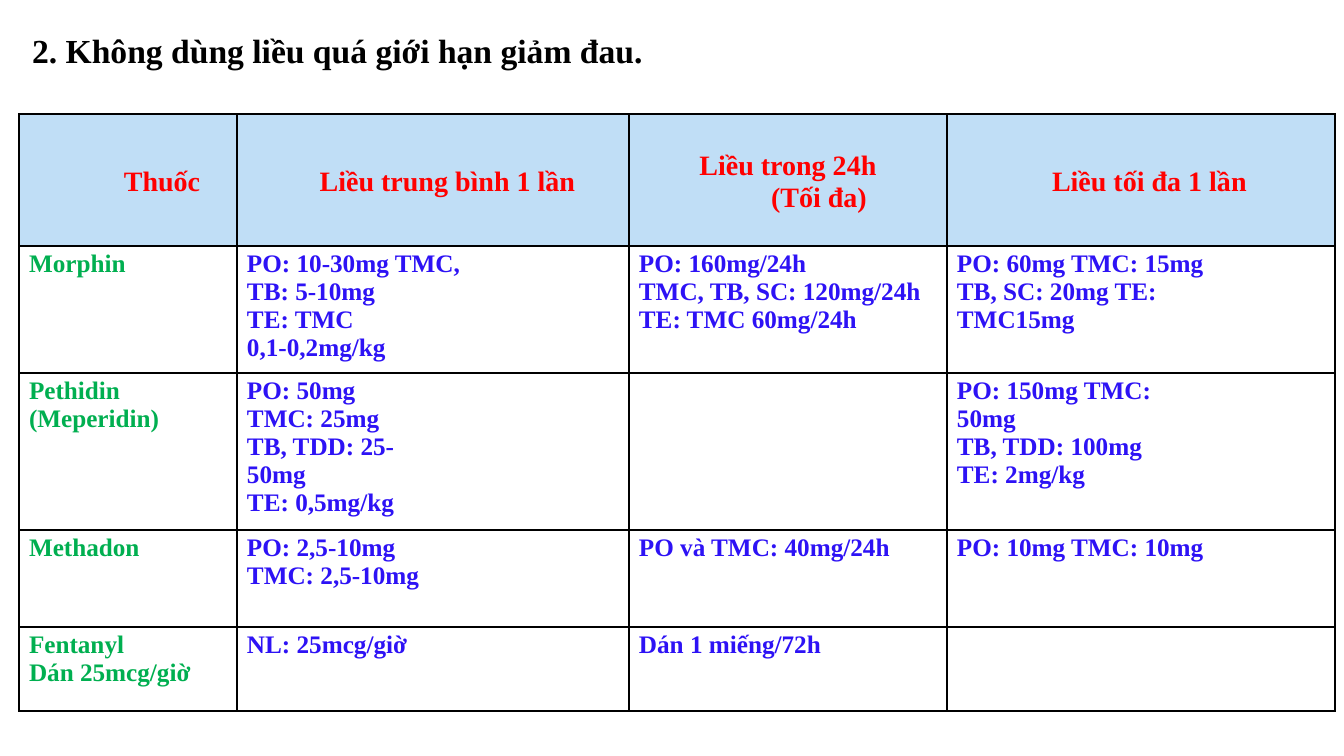
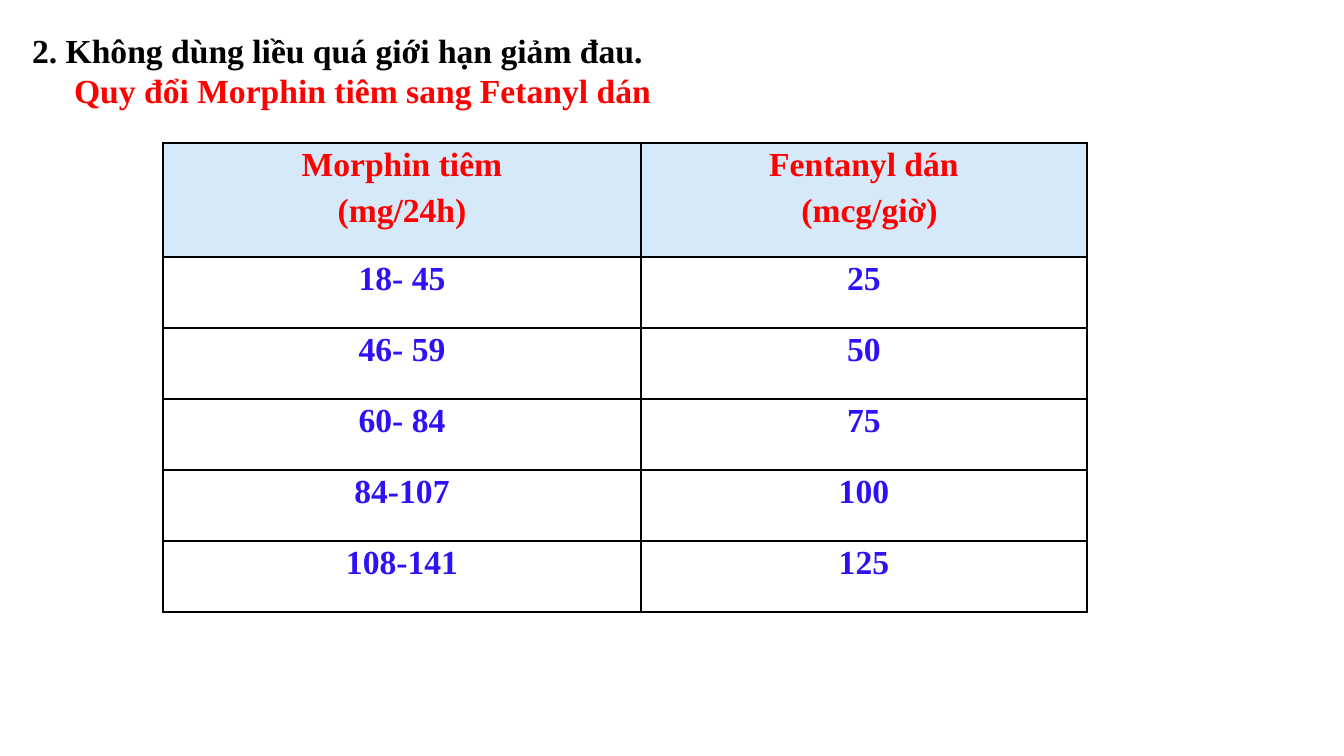
import itertools

import lxml.etree
import pptx
import pptx.dml.color
import pptx.enum.text
import pptx.oxml.ns
import pptx.util

WIDE, HIGH = 1344, 756
FONT = "Times New Roman"
BLACK, RED, GREEN, BLUE = "000000", "FF0000", "00AF50", "2D12F5"
ALIGN = pptx.enum.text.PP_ALIGN
ANCHOR = pptx.enum.text.MSO_ANCHOR

HEADING = "2. Không dùng liều quá giới hạn giảm đau."
SUBHEAD = "Quy đổi Morphin tiêm sang Fetanyl dán"

# In cell text, \n starts a paragraph and \v breaks a line within one.
DOSES = {
    "at": (19, 114),
    "cols": (218, 392, 318, 388),
    "rows": (132, 127, 157, 97, 84),
    "band": "C0DEF6",
    "head": {"size": 20, "color": RED, "align": ALIGN.CENTER},
    "first": {"size": 18, "color": GREEN, "indents": [10]},
    "body": {"size": 18, "color": BLUE, "indents": [10]},
    "anchor": ANCHOR.MIDDLE,
    "shifts": ([68], [29], [0, 62], [17]),
    "cells": [
        ("Thuốc", "Liều trung bình 1 lần", "Liều trong 24h\n(Tối đa)",
         "Liều tối đa 1 lần"),
        ("Morphin",
         "PO: 10-30mg TMC,\vTB: 5-10mg\nTE: TMC\v0,1-0,2mg/kg",
         "PO: 160mg/24h\nTMC, TB, SC: 120mg/24h\nTE: TMC 60mg/24h",
         "PO: 60mg TMC: 15mg\vTB, SC: 20mg TE:\vTMC15mg"),
        ("Pethidin\v(Meperidin)",
         "PO: 50mg\vTMC: 25mg\nTB, TDD: 25-\v50mg\nTE: 0,5mg/kg",
         "",
         "PO: 150mg TMC:\v50mg\nTB, TDD: 100mg\nTE: 2mg/kg"),
        ("Methadon", "PO: 2,5-10mg\vTMC: 2,5-10mg", "PO và TMC: 40mg/24h",
         "PO: 10mg TMC: 10mg"),
        ("Fentanyl\nDán 25mcg/giờ", "NL: 25mcg/giờ", "Dán 1 miếng/72h", ""),
    ],
}

SWAPS = {
    "at": (163, 143),
    "cols": (478, 446),
    "rows": (114, 71, 71, 71, 71, 71),
    "band": "D5E9F9",
    "head": {"size": 24, "color": RED, "align": ALIGN.CENTER, "gap": 6},
    "first": {"size": 24, "color": BLUE, "align": ALIGN.CENTER},
    "body": {"size": 24, "color": BLUE, "align": ALIGN.CENTER},
    "anchor": ANCHOR.TOP,
    "shifts": ([0], [0, 11]),
    "cells": [
        ("Morphin tiêm\n(mg/24h)", "Fentanyl dán\n(mcg/giờ)"),
        ("18- 45", "25"),
        ("46- 59", "50"),
        ("60- 84", "75"),
        ("84-107", "100"),
        ("108-141", "125"),
    ],
}

SLIDES = [([HEADING], DOSES), ([HEADING, SUBHEAD], SWAPS)]


def px(count):
    return pptx.util.Emu(round(count * 12192000 / WIDE))


def rgb(code):
    return pptx.dml.color.RGBColor.from_string(code)


def style(para, size, color, align=ALIGN.LEFT, indent=0, before=0):
    font = para.font
    font.name, font.size, font.bold = FONT, pptx.util.Pt(size), True
    font.color.rgb = rgb(color)
    para.alignment = align
    para.space_before = pptx.util.Pt(before)
    props = para._p.get_or_add_pPr()
    props.set("marL", str(px(indent)))
    props.set("indent", "0")


def write(cell, text, size, color, align=ALIGN.LEFT, indents=(0,), gap=0):
    """Fill a cell; the last indent holds for all further paragraphs."""
    cell.text_frame.text = text
    for i, para in enumerate(cell.text_frame.paragraphs):
        indent = indents[min(i, len(indents) - 1)]
        style(para, size, color, align, indent, gap if i else 3)


def frame(cell):
    """Draw a thin black line on all four sides."""
    props = cell._tc.get_or_add_tcPr()
    name = pptx.oxml.ns.qn
    for side in ("lnL", "lnR", "lnT", "lnB"):
        line = lxml.etree.SubElement(props, name("a:" + side), w="12700")
        fill = lxml.etree.SubElement(line, name("a:solidFill"))
        lxml.etree.SubElement(fill, name("a:srgbClr"), val=BLACK)


def add_title(slide, lines):
    title = slide.shapes.title
    title.left, title.top = px(22), px(25)
    title.width, title.height = px(861), px(9 + 41 * len(lines))
    box = title.text_frame
    box.text = "\n".join(lines)
    box.word_wrap = True
    box.auto_size = pptx.enum.text.MSO_AUTO_SIZE.NONE
    box.vertical_anchor = ANCHOR.TOP
    looks = ((BLACK, 0), (RED, 42))
    for para, (color, indent) in zip(box.paragraphs, looks):
        style(para, 24, color, indent=indent)


def add_grid(slide, data):
    cols, rows = data["cols"], data["rows"]
    area = [px(n) for n in (*data["at"], sum(cols), sum(rows))]
    table = slide.shapes.add_table(len(rows), len(cols), *area).table
    table.first_row = table.horz_banding = False
    for col, width in zip(table.columns, cols):
        col.width = px(width)
    for row, height in zip(table.rows, rows):
        row.height = px(height)
    for r, c in itertools.product(range(len(rows)), range(len(cols))):
        cell = table.cell(r, c)
        cell.margin_left = cell.margin_right = cell.margin_bottom = 0
        cell.margin_top = px(4)
        frame(cell)
        text = data["cells"][r][c]
        if r == 0:
            cell.fill.solid()
            cell.fill.fore_color.rgb = rgb(data["band"])
            cell.vertical_anchor = data["anchor"]
            write(cell, text, indents=data["shifts"][c], **data["head"])
        else:
            cell.fill.background()
            write(cell, text, **data["body" if c else "first"])


def main():
    deck = pptx.Presentation()
    deck.slide_width, deck.slide_height = px(WIDE), px(HIGH)
    for lines, data in SLIDES:
        slide = deck.slides.add_slide(deck.slide_layouts[5])
        add_title(slide, lines)
        add_grid(slide, data)
    deck.save("out.pptx")


if __name__ == "__main__":
    main()
